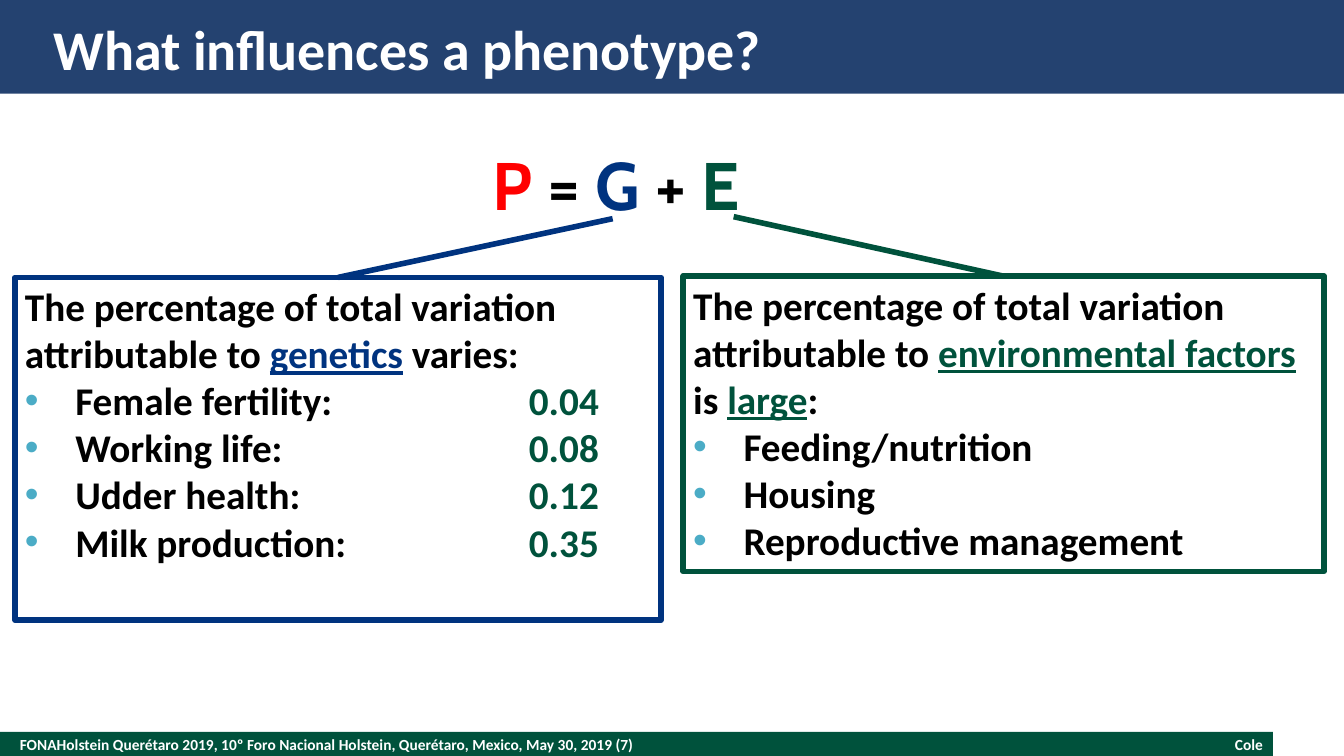
from lxml import etree
from pptx import Presentation
from pptx.dml.color import RGBColor
from pptx.enum.shapes import MSO_CONNECTOR, MSO_SHAPE
from pptx.enum.text import MSO_ANCHOR, PP_ALIGN
from pptx.oxml.ns import qn
from pptx.util import Cm, Pt

RECTANGLE = MSO_SHAPE.RECTANGLE
STRAIGHT = MSO_CONNECTOR.STRAIGHT
TOP, MIDDLE = MSO_ANCHOR.TOP, MSO_ANCHOR.MIDDLE
LEFT, CENTER, RIGHT = PP_ALIGN.LEFT, PP_ALIGN.CENTER, PP_ALIGN.RIGHT

WHITE = RGBColor(0xFF, 0xFF, 0xFF)
BLACK = RGBColor(0x00, 0x00, 0x00)
RED = RGBColor(0xFF, 0x00, 0x00)
NAVY = RGBColor(0x24, 0x42, 0x70)
BLUE = RGBColor(0x00, 0x33, 0x7F)
GREEN = RGBColor(0x00, 0x52, 0x3C)
BULLET_BLUE = RGBColor(0x4B, 0xAC, 0xC6)

SLIDE_WIDTH, SLIDE_HEIGHT = 33.87, 19.05
BULLET_INDENT = 1.27
VALUE_TAB = 12.7
LINE_WIDTH = Pt(4)
TOP_SIDE = 0

TITLE_FORMAT = {"name": "Calibri", "size": Pt(40), "bold": True}
FORMULA_FORMAT = {"name": "Cabin", "size": Pt(48), "bold": True}
BODY_FORMAT = {"name": "Calibri", "size": Pt(28), "bold": True}
FOOTER_FORMAT = {"name": "Calibri", "size": Pt(11), "bold": True}


def set_frame(frame, anchor, insets):
    frame.word_wrap = True
    values = {"vertical_anchor": anchor}
    sides = ("margin_left", "margin_top", "margin_right", "margin_bottom")
    values.update(zip(sides, map(Cm, insets)))
    for key, value in values.items():
        setattr(frame, key, value)


def add_spans(para, spans, text_format, align=LEFT):
    para.alignment = align
    for text, color, *underline in spans:
        span = para.add_run()
        span.text = text
        for key, value in text_format.items():
            setattr(span.font, key, value)
        span.font.color.rgb = color
        if underline:
            span.font.underline = True


def add_bullet(para):
    properties = para._p.get_or_add_pPr()
    properties.set("marL", str(Cm(BULLET_INDENT)))
    properties.set("indent", str(-Cm(BULLET_INDENT)))
    color = etree.SubElement(properties, qn("a:buClr"))
    etree.SubElement(color, qn("a:srgbClr"), val=str(BULLET_BLUE))
    etree.SubElement(properties, qn("a:buFont"), typeface="Arial")
    etree.SubElement(properties, qn("a:buChar"), char="•")
    tabs = etree.SubElement(properties, qn("a:tabLst"))
    etree.SubElement(tabs, qn("a:tab"), pos=str(Cm(VALUE_TAB)), algn="l")


def add_bar(page, left, top, width, height, color):
    bar = page.shapes.add_shape(RECTANGLE, Cm(left), Cm(top), Cm(width), Cm(height))
    bar.shadow.inherit = False
    bar.fill.solid()
    bar.fill.fore_color.rgb = color
    bar.line.fill.background()


def add_label(page, left, top, width, height, spans, text_format,
              align=LEFT, anchor=MIDDLE, insets=(0, 0, 0, 0)):
    box = page.shapes.add_textbox(Cm(left), Cm(top), Cm(width), Cm(height))
    set_frame(box.text_frame, anchor, insets)
    add_spans(box.text_frame.paragraphs[0], spans, text_format, align)


def add_header(page, left, top, width, height):
    add_bar(page, left, top, width, height, NAVY)
    add_label(page, left + 1.35, top + 0.33, width - 2.7, 1.78,
              [("What influences a phenotype?", WHITE)], TITLE_FORMAT)


def add_footer(page, left, top, width, height):
    event = "FONAHolstein Querétaro 2019, 10º Foro Nacional Holstein, Querétaro, Mexico, May 30, 2019 (7)"
    add_bar(page, left, top, width, height, GREEN)
    add_label(page, left + 0.5, top, 22, height, [(event, WHITE)], FOOTER_FORMAT)
    add_label(page, left + width - 7.7, top, 7.45, height,
              [("Cole", WHITE)], FOOTER_FORMAT, RIGHT)


def add_formula(page, left, top, width, height):
    spans = [("P ", RED), ("= ", BLACK), ("G", BLUE), (" + ", BLACK), ("E", GREEN)]
    add_label(page, left, top, width, height, spans, FORMULA_FORMAT,
              CENTER, TOP, (0.25, 0.13, 2.89, 0.13))


def add_factor(page, left, top, width, height, color, start, intro, items):
    box = page.shapes.add_shape(RECTANGLE, Cm(left), Cm(top), Cm(width), Cm(height))
    box.shadow.inherit = False
    box.fill.background()
    box.line.color.rgb = color
    box.line.width = LINE_WIDTH
    frame = box.text_frame
    set_frame(frame, TOP, (0.25, 0.13, 0.25, 0.13))
    add_spans(frame.paragraphs[0], intro, BODY_FORMAT)
    for spans in items:
        para = frame.add_paragraph()
        add_bullet(para)
        add_spans(para, spans, BODY_FORMAT)

    start_x, start_y = start
    link = page.shapes.add_connector(STRAIGHT, Cm(start_x), Cm(start_y),
                                     Cm(left + width / 2), Cm(top))
    link.end_connect(box, TOP_SIDE)
    link.line.color.rgb = color
    link.line.width = LINE_WIDTH
    etree.SubElement(link._element.spPr, qn("a:effectLst"))


def main():
    deck = Presentation()
    deck.slide_width, deck.slide_height = Cm(SLIDE_WIDTH), Cm(SLIDE_HEIGHT)
    page = deck.slides.add_slide(deck.slide_layouts[6])

    add_footer(page, 0, 18.44, 32.08, 0.61)
    add_header(page, 0, 0, SLIDE_WIDTH, 2.36)
    add_formula(page, 5.51, 3.48, 22.66, 2.39)

    opening = ("The percentage of total variation attributable to ", BLACK)
    traits = [("Female fertility:", "0.04"), ("Working life:", "0.08"),
              ("Udder health:", "0.12"), ("Milk production:", "0.35")]
    add_factor(page, 0.38, 6.99, 16.28, 8.64, BLUE, (15.44, 5.51),
               [opening, ("genetics", BLUE, True), (" varies:", BLACK)],
               [[(trait + "\t", BLACK), (share, GREEN)] for trait, share in traits])

    conditions = ["Feeding/nutrition", "Housing", "Reproductive management"]
    add_factor(page, 17.22, 6.96, 16.15, 7.44, GREEN, (18.49, 5.46),
               [opening, ("environmental factors", GREEN, True), (" is ", BLACK),
                ("large", GREEN, True), (":", BLACK)],
               [[(condition, BLACK)] for condition in conditions])

    deck.save("out.pptx")


if __name__ == "__main__":
    main()
